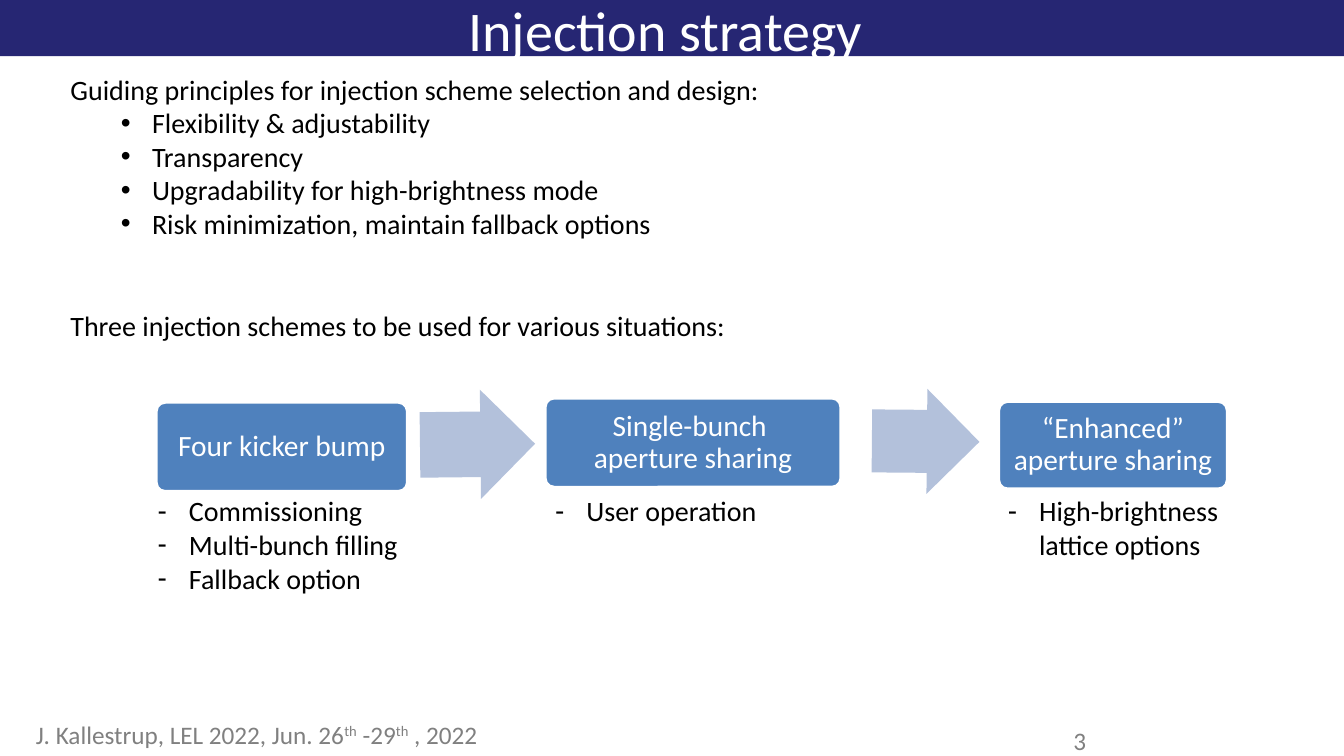
import pptx
import pptx.util
import pptx.dml.color
import pptx.enum.shapes
import pptx.enum.text
import pptx.oxml.ns
import lxml.etree

ANCHOR = pptx.enum.text.MSO_ANCHOR
ALIGN = pptx.enum.text.PP_ALIGN
SHAPE = pptx.enum.shapes.MSO_SHAPE
Pt = pptx.util.Pt
Inches = pptx.util.Inches

WIDTH, HEIGHT = 13.33, 7.5
COLUMNS, ROWS = 16, 9
NAVY, BLUE, PALE, GREY = "262673", "4F81BD", "B3C1DB", "808080"
WHITE, BLACK = "FFFFFF", "000000"


def colour(value):
    return pptx.dml.color.RGBColor.from_string(value)


class Canvas:
    """Holds the text style and the current page; lengths are columns and rows."""

    font = "Calibri"
    indent = 0.31

    def __init__(self, page):
        self.page = page

    def place(self, left, top, width, height):
        across, down = WIDTH / COLUMNS, HEIGHT / ROWS
        return [Inches(left * across), Inches(top * down),
                Inches(width * across), Inches(height * down)]

    def shape(self, kind, at, fill, line=None, adjust=(), turn=0):
        item = self.page.shapes.add_shape(kind, *self.place(*at))
        item.shadow.inherit = False
        item.fill.solid()
        item.fill.fore_color.rgb = colour(fill)
        if line:
            item.line.color.rgb = colour(line)
            item.line.width = Pt(2)
        else:
            item.line.fill.background()
        for index, value in enumerate(adjust):
            item.adjustments[index] = value
        item.rotation = turn
        return item

    def text_box(self, at, wrap=True, anchor=ANCHOR.TOP):
        frame = self.page.shapes.add_textbox(*self.place(*at)).text_frame
        frame.word_wrap = wrap
        frame.vertical_anchor = anchor
        return frame

    def style(self, span, size, shade):
        for name, value in {"name": self.font, "size": Pt(size)}.items():
            setattr(span.font, name, value)
        span.font.color.rgb = colour(shade)

    def paragraph(self, frame, text, size, shade, bullet=None, margin=0, **layout):
        first = frame.paragraphs[0]
        para = frame.add_paragraph() if first.runs else first
        for name, value in layout.items():
            setattr(para, name, value)
        if bullet:
            self.bullet(para, bullet, margin)
        para.text = text
        for span in para.runs:
            self.style(span, size, shade)
        return para

    def bullet(self, para, mark, margin):
        props = para._p.get_or_add_pPr()
        props.set("marL", str(Inches(margin + self.indent)))
        props.set("indent", str(-Inches(self.indent)))
        for tag, key, value in (("a:buFont", "typeface", "Arial"),
                                ("a:buChar", "char", mark)):
            lxml.etree.SubElement(props, pptx.oxml.ns.qn(tag)).set(key, value)

    def span(self, para, text, size, shade, raised=False):
        span = para.add_run()
        span.text = text
        self.style(span, size, shade)
        if raised:
            span.font._element.set("baseline", "30000")

    def scheme(self, at, text):
        box = self.shape(SHAPE.ROUNDED_RECTANGLE, at, BLUE, WHITE, [0.1])
        frame = box.text_frame
        margins = ("margin_left", "margin_top", "margin_right", "margin_bottom")
        for name in margins:
            setattr(frame, name, Inches(0.09))
        frame.word_wrap = True
        frame.vertical_anchor = ANCHOR.MIDDLE
        self.paragraph(frame, text, 21, WHITE, alignment=ALIGN.CENTER,
                       line_spacing=0.9)

    def uses(self, at, items):
        frame = self.text_box(at, wrap=False)
        for item in items:
            self.paragraph(frame, item, 20, BLACK, bullet="-")


def main():
    deck = pptx.Presentation()
    deck.slide_width, deck.slide_height = Inches(WIDTH), Inches(HEIGHT)
    canvas = Canvas(deck.slides.add_slide(deck.slide_layouts[6]))

    # Title bar
    canvas.shape(SHAPE.RECTANGLE, (0, 0, COLUMNS, 0.67), NAVY)
    title = canvas.text_box((0.31, -0.13, 15.37, 0.95), anchor=ANCHOR.MIDDLE)
    canvas.paragraph(title, "Injection strategy ", 40, WHITE, alignment=ALIGN.CENTER)

    # Guiding principles
    body = canvas.text_box((0.72, 0.8, 13.04, 6.38))
    canvas.paragraph(body, "Guiding principles for injection scheme selection and design:",
                     20, BLACK)
    for principle in ("Flexibility & adjustability", "Transparency",
                      "Upgradability for high-brightness mode",
                      "Risk minimization, maintain fallback options"):
        canvas.paragraph(body, principle, 20, BLACK, bullet="•", margin=0.5, level=1)
    canvas.paragraph(body, "Three injection schemes to be used for various situations:",
                     20, BLACK, space_before=Pt(49))

    # Injection schemes and what each is used for
    schemes = (
        ((1.86, 4.79, 2.99, 1.06), "Four kicker bump", (1.76, 5.82, 3.13, 1.33),
         ["Commissioning", "Multi-bunch filling", "Fallback option"]),
        ((6.49, 4.74, 3.52, 1.06), "Single-bunch \vaperture sharing",
         (6.49, 5.82, 2.66, 0.53), ["User operation"]),
        ((11.89, 4.78, 2.72, 1.04), "“Enhanced” aperture sharing",
         (11.88, 5.82, 2.84, 0.92), ["High-brightness \vlattice options"]),
    )
    for box_at, name, list_at, items in schemes:
        canvas.scheme(box_at, name)
        canvas.uses(list_at, items)

    # Arrows between schemes
    for at, turn in (((5, 4.64, 1.37, 1.3), 359.4), ((10.38, 4.63, 1.28, 1.25), 0.5)):
        canvas.shape(SHAPE.RIGHT_ARROW, at, PALE, adjust=[0.6, 0.5], turn=turn)

    # Footer and page number
    footer = canvas.text_box((0.31, 8.5, 12.35, 0.5))
    para = canvas.paragraph(footer, "J. Kallestrup, LEL 2022, Jun. 26", 18, GREY)
    for following in (" -29", " , 2022"):
        canvas.span(para, "th", 18, GREY, raised=True)
        canvas.span(para, following, 18, GREY)
    number = canvas.text_box((12.66, 8.57, 1.1, 0.5))
    canvas.paragraph(number, "3", 18, GREY)

    deck.save("out.pptx")


if __name__ == "__main__":
    main()
